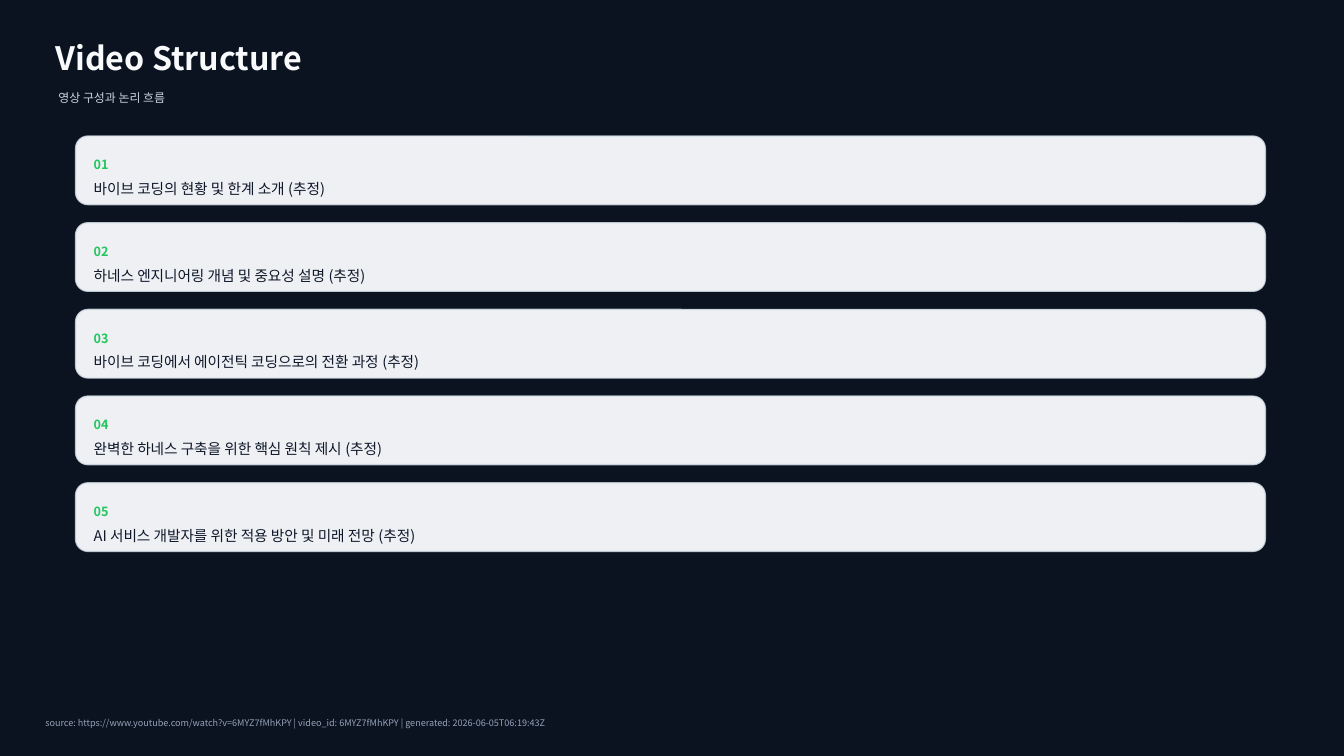
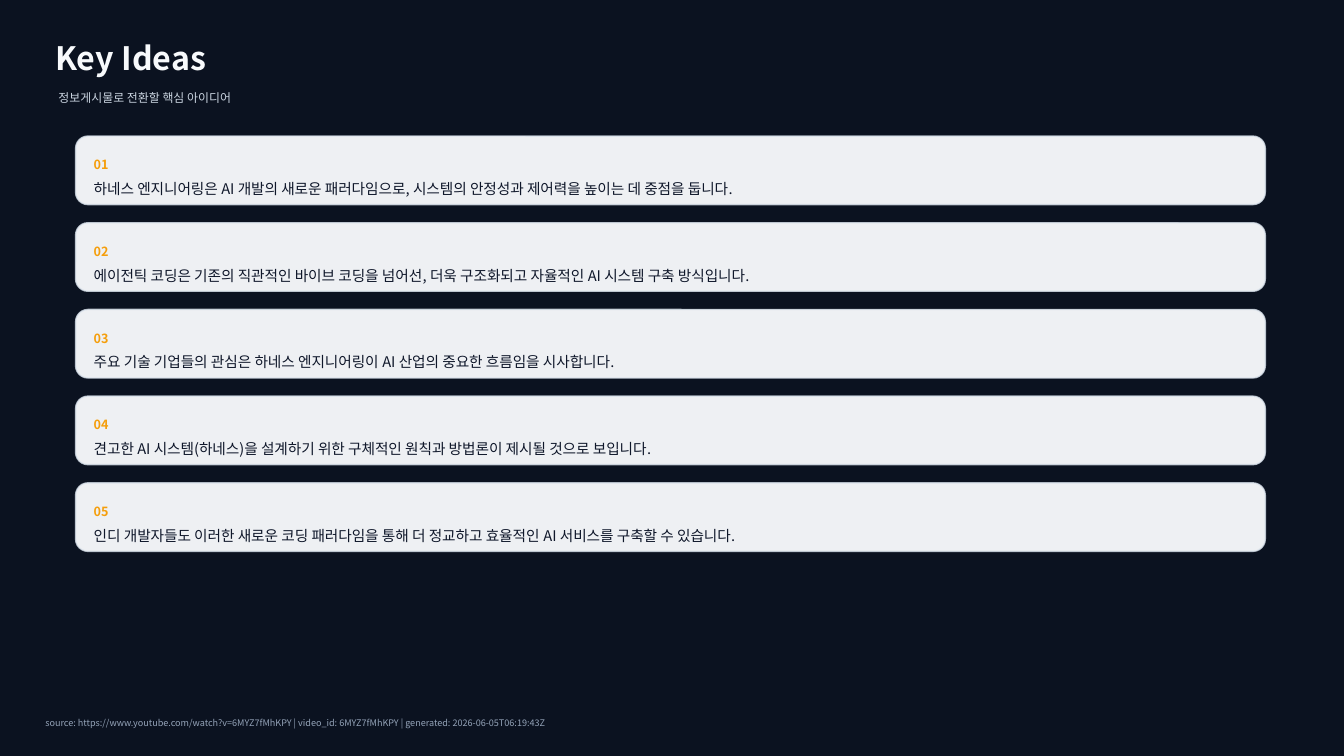
from dataclasses import dataclass

from lxml import etree
from pptx import Presentation
from pptx import util as u
from pptx.dml.color import RGBColor
from pptx.enum import shapes, text
from pptx.oxml import ns
from pptx.slide import Slide

FONT = "Noto Sans CJK KR"
BACKGROUND = "0B1220"
LIGHT = "F8FAFC"
SUBTITLE = "CBD5E1"
BODY = "0F172A"
BORDER = "D7E0EA"
MUTED = "94A3B8"
FOOTER = (
    "source: https://www.youtube.com/watch?v=6MYZ7fMhKPY"
    " | video_id: 6MYZ7fMhKPY | generated: 2026-06-05T06:19:43Z"
)

CARD_LEFT, CARD_TOP = 0.75, 1.35
CARD_WIDTH, CARD_HEIGHT = 11.8, 0.68
CARD_GAP = 0.18
CARD_PADDING = 0.18


@dataclass(frozen=True)
class CardSlide:
    title: str
    subtitle: str
    accent: str
    items: tuple[str, ...]


CARD_SLIDES = (
    CardSlide(
        "Video Structure",
        "영상 구성과 논리 흐름",
        "22C55E",
        (
            "바이브 코딩의 현황 및 한계 소개 (추정)",
            "하네스 엔지니어링 개념 및 중요성 설명 (추정)",
            "바이브 코딩에서 에이전틱 코딩으로의 전환 과정 (추정)",
            "완벽한 하네스 구축을 위한 핵심 원칙 제시 (추정)",
            "AI 서비스 개발자를 위한 적용 방안 및 미래 전망 (추정)",
        ),
    ),
    CardSlide(
        "Key Ideas",
        "정보게시물로 전환할 핵심 아이디어",
        "F59E0B",
        (
            "하네스 엔지니어링은 AI 개발의 새로운 패러다임으로, 시스템의 안정성과 제어력을 높이는 데 중점을 둡니다.",
            "에이전틱 코딩은 기존의 직관적인 바이브 코딩을 넘어선, 더욱 구조화되고 자율적인 AI 시스템 구축 방식입니다.",
            "주요 기술 기업들의 관심은 하네스 엔지니어링이 AI 산업의 중요한 흐름임을 시사합니다.",
            "견고한 AI 시스템(하네스)을 설계하기 위한 구체적인 원칙과 방법론이 제시될 것으로 보입니다.",
            "인디 개발자들도 이러한 새로운 코딩 패러다임을 통해 더 정교하고 효율적인 AI 서비스를 구축할 수 있습니다.",
        ),
    ),
)


def set_fill(fill, color: str, opacity: int = 100) -> None:
    fill.solid()
    fill.fore_color.rgb = RGBColor.from_string(color)
    if opacity < 100:
        solid = fill._xPr.find(ns.qn("a:solidFill"))
        etree.SubElement(solid[0], ns.qn("a:alpha"), val=str(opacity * 1000))


def add_text(
    slide: Slide,
    content: str,
    *,
    left: float,
    top: float,
    width: float,
    height: float,
    size: float,
    color: str,
    bold: bool = False,
) -> None:
    shape = slide.shapes.add_textbox(*map(u.Inches, (left, top, width, height)))
    frame = shape.text_frame
    frame.word_wrap = True
    frame.vertical_anchor = text.MSO_ANCHOR.MIDDLE
    frame.margin_left = frame.margin_right = 0
    frame.margin_top = frame.margin_bottom = 0
    run = frame.paragraphs[0].add_run()
    run.text = content
    run.font.size = u.Pt(size)
    run.font.bold = bold
    run.font.name = FONT
    set_fill(run.font.fill, color)
    properties = run._r.get_or_add_rPr()
    etree.SubElement(properties, ns.qn("a:ea"), typeface=FONT)


def add_card(slide: Slide, index: int, content: str, accent: str) -> None:
    top = CARD_TOP + index * (CARD_HEIGHT + CARD_GAP)
    shape = slide.shapes.add_shape(
        shapes.MSO_SHAPE.ROUNDED_RECTANGLE,
        *map(u.Inches, (CARD_LEFT, top, CARD_WIDTH, CARD_HEIGHT)),
    )
    shape.shadow.inherit = False
    shape.adjustments[0] = 0.18
    set_fill(shape.fill, LIGHT, opacity=96)
    shape.line.width = u.Pt(1)
    set_fill(shape.line.fill, BORDER, opacity=80)

    left = CARD_LEFT + CARD_PADDING
    width = CARD_WIDTH - 2 * CARD_PADDING
    add_text(slide, f"{index + 1:02}", left=left, top=top + 0.16, width=width,
             height=0.25, size=9, color=accent, bold=True)
    add_text(slide, content, left=left, top=top + 0.5, width=width,
             height=0.04, size=10.5, color=BODY)


def add_card_slide(presentation, content: CardSlide) -> None:
    slide = presentation.slides.add_slide(presentation.slide_layouts[6])
    set_fill(slide.background.fill, BACKGROUND)
    add_text(slide, content.title, left=0.55, top=0.35, width=12,
             height=0.45, size=23, color=LIGHT, bold=True)
    add_text(slide, content.subtitle, left=0.58, top=0.83, width=11.5,
             height=0.28, size=8.5, color=SUBTITLE)
    for index, item in enumerate(content.items):
        add_card(slide, index, item, content.accent)
    add_text(slide, FOOTER, left=0.45, top=7.05, width=12.4,
             height=0.25, size=6.5, color=MUTED)


def main() -> None:
    presentation = Presentation()
    presentation.slide_width = u.Inches(13.33)
    presentation.slide_height = u.Inches(7.5)
    for content in CARD_SLIDES:
        add_card_slide(presentation, content)
    presentation.save("out.pptx")


if __name__ == "__main__":
    main()
